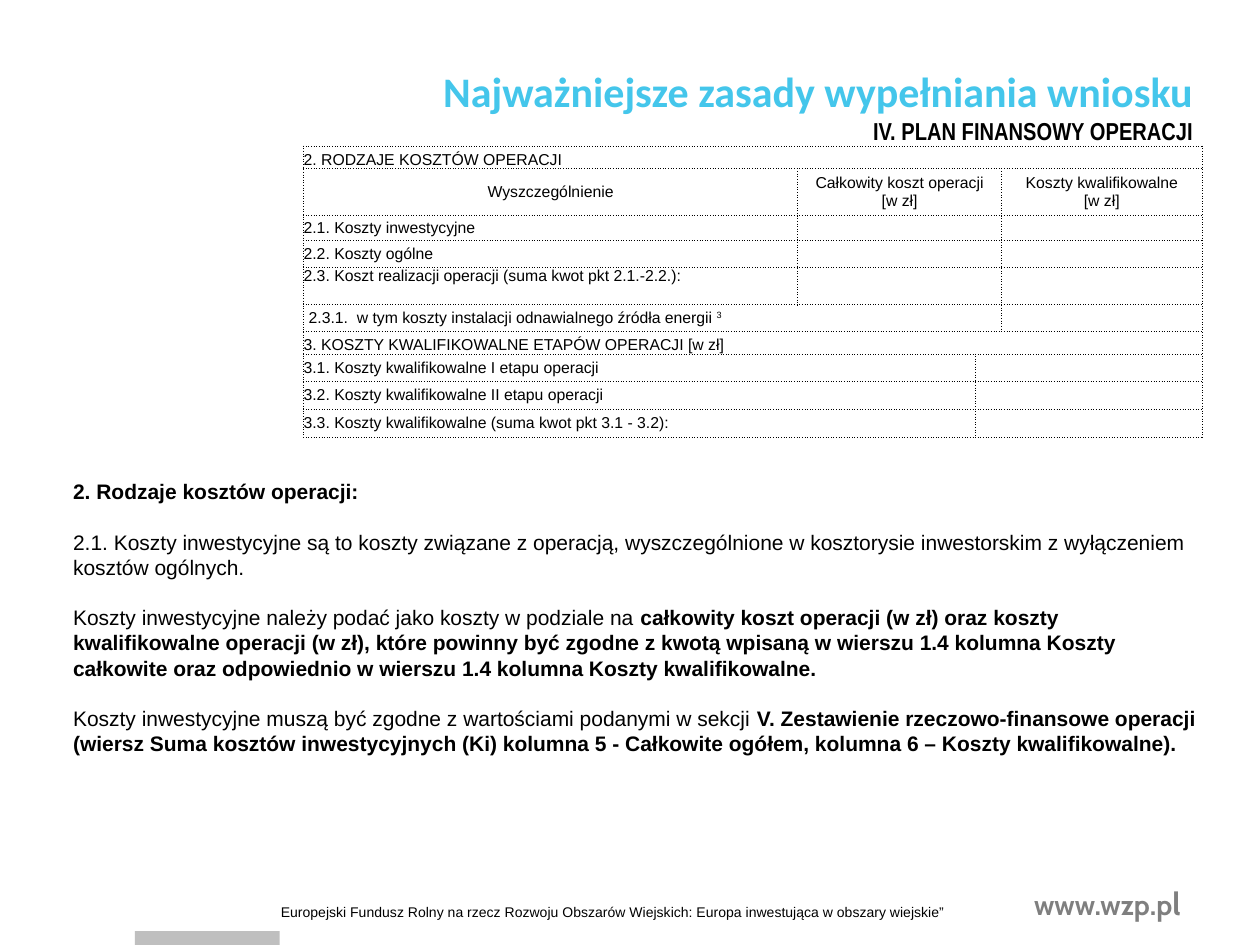
from lxml import etree
from pptx import Presentation
from pptx import util as u
from pptx.dml import color
from pptx.enum import shapes, text
from pptx.oxml import ns

ROWS = [
    (0.18, ["2. RODZAJE KOSZTÓW OPERACJI"], [(0, 3)]),
    (0.37, ["Wyszczególnienie", "Całkowity koszt operacji\v[w zł]", "",
            "Koszty kwalifikowalne\v[w zł]"], [(1, 2)]),
    (0.2, ["2.1. Koszty inwestycyjne"], [(1, 2)]),
    (0.21, ["2.2. Koszty ogólne"], [(1, 2)]),
    (0.3, ["2.3. Koszt realizacji operacji (suma kwot pkt 2.1.-2.2.):"], [(1, 2)]),
    (0.21, ["2.3.1.  w tym koszty instalacji odnawialnego źródła energii "], [(0, 2)]),
    (0.18, ["3. KOSZTY KWALIFIKOWALNE ETAPÓW OPERACJI [w zł]"], [(0, 3)]),
    (0.22, ["3.1. Koszty kwalifikowalne I etapu operacji"], [(0, 1), (2, 3)]),
    (0.22, ["3.2. Koszty kwalifikowalne II etapu operacji"], [(0, 1), (2, 3)]),
    (0.22, ["3.3. Koszty kwalifikowalne (suma kwot pkt 3.1 - 3.2):"], [(0, 1), (2, 3)]),
]
COLS = [3.92, 1.41, 0.21, 1.59]
HEAD, NOTE, TOP = 1, 5, 4
BANDS = (0, 6)
BODY = [
    [("2. Rodzaje kosztów operacji:", True)],
    [("2.1. Koszty inwestycyjne są to koszty związane z operacją, wyszczególnione "
      "w kosztorysie inwestorskim z wyłączeniem kosztów ogólnych.", False)],
    [("Koszty inwestycyjne należy podać jako koszty w podziale na ", False),
     ("całkowity koszt operacji (w zł) oraz koszty kwalifikowalne operacji (w zł), "
      "które powinny być zgodne z kwotą wpisaną w wierszu 1.4 kolumna Koszty całkowite "
      "oraz odpowiednio w wierszu 1.4 kolumna Koszty kwalifikowalne.", True)],
    [("Koszty inwestycyjne muszą być zgodne z wartościami podanymi w sekcji ", False),
     ("V. Zestawienie rzeczowo-finansowe operacji (wiersz Suma kosztów inwestycyjnych "
      "(Ki) kolumna 5 - Całkowite ogółem, kolumna 6 – Koszty kwalifikowalne).", True)],
]


def paint(item, tint):
    """Give a fill or a font the colour of a hex string."""
    tone = color.RGBColor.from_string(tint)
    if hasattr(item, "solid"):
        item.solid()
        item.fore_color.rgb = tone
    else:
        item.color.rgb = tone


def style(font, name, size, tint, bold=False):
    """Set the face, size, colour and weight of a font."""
    font.name, font.size, font.bold = name, u.Pt(size), bold
    paint(font, tint)


def place(shape, box):
    """Move a shape to a box in inches."""
    shape.left, shape.top, shape.width, shape.height = map(u.Inches, box)


def frame(shape):
    """Return the wrapped, top-anchored text frame of a shape."""
    tf = shape.text_frame
    tf.word_wrap = True
    tf.auto_size = text.MSO_AUTO_SIZE.NONE
    tf.vertical_anchor = text.MSO_ANCHOR.TOP
    return tf


def rule(cell):
    """Draw dotted borders round a table cell."""
    props = cell._tc.get_or_add_tcPr()
    for side in ("a:lnL", "a:lnR", "a:lnT", "a:lnB"):
        line = etree.SubElement(props, ns.qn(side), w=str(u.Pt(0.5)))
        fill = etree.SubElement(line, ns.qn("a:solidFill"))
        etree.SubElement(fill, ns.qn("a:srgbClr"), val="000000")
        etree.SubElement(line, ns.qn("a:prstDash"), val="sysDot")


def title(slide, box):
    """Fill the title placeholder with the heading and its section."""
    place(slide.shapes.title, box)
    tf = frame(slide.shapes.title)
    tf.text = "Najważniejsze zasady wypełniania wniosku\nIV. PLAN FINANSOWY OPERACJI"
    looks = [("Calibri", 24, "44C6EB", True), ("Arial Narrow", 14, "000000", True)]
    for para, look in zip(tf.paragraphs, looks):
        para.alignment = text.PP_ALIGN.RIGHT
        style(para.font, *look)


def body(slide, box):
    """Fill the body placeholder with the rules on costs."""
    shape = slide.placeholders[1]
    place(shape, box)
    tf = frame(shape)
    for i, parts in enumerate(BODY):
        para = tf.add_paragraph() if i else tf.paragraphs[0]
        para.space_before = u.Pt(14.4 if i else 0)
        props = para._p.get_or_add_pPr()
        props.set("marL", "0")
        props.set("indent", "0")
        etree.SubElement(props, ns.qn("a:buNone"))
        style(para.font, "Arial", 12, "000000")
        for words, bold in parts:
            run = para.add_run()
            run.text, run.font.bold = words, bold


def fill(cell, words, row):
    """Write one table cell in the manner of its row."""
    rule(cell)
    paint(cell.fill, "FFFFFF")
    cell.margin_left = cell.margin_right = cell.margin_top = cell.margin_bottom = 0
    anchor = text.MSO_ANCHOR
    cell.vertical_anchor = (anchor.BOTTOM if row in BANDS else
                            anchor.TOP if row == TOP else anchor.MIDDLE)
    para = cell.text_frame.paragraphs[0]
    para.text = words
    if row == HEAD:
        para.alignment = text.PP_ALIGN.CENTER
    style(para.font, "Arial", 9, "000000")
    if not words:
        etree.SubElement(para._p, ns.qn("a:endParaRPr"), sz="900")
    elif row == NOTE:
        cell.margin_left = u.Inches(0.04)
        mark = para.add_run()
        mark.text = "3"
        mark._r.get_or_add_rPr().set("baseline", "30000")


def costs(slide, box):
    """Add the table of cost types and stages."""
    table = slide.shapes.add_table(len(ROWS), len(COLS), *map(u.Inches, box)).table
    table.first_row = table.horz_banding = False
    for col, width in zip(table.columns, COLS):
        col.width = u.Inches(width)
    for r, (height, words, spans) in enumerate(ROWS):
        table.rows[r].height = u.Inches(height)
        for c in range(len(COLS)):
            fill(table.cell(r, c), words[c] if c < len(words) else "", r)
        for first, last in spans:
            table.cell(r, first).merge(table.cell(r, last))


def label(slide, box, words):
    """Add a text box and return its paragraph."""
    para = frame(slide.shapes.add_textbox(*map(u.Inches, box))).paragraphs[0]
    para.text = words
    return para


def footer(slide, box):
    """Add the bar, the fund line and the web address."""
    x, y, wide, high = box
    bar = slide.shapes.add_shape(shapes.MSO_SHAPE.RECTANGLE,
                                 *map(u.Inches, (x, y + high - 0.11, 1.15, 0.11)))
    bar.shadow.inherit = False
    paint(bar.fill, "BFBFBF")
    bar.line.fill.background()
    site = label(slide, (x + wide - 1.49, y, 1.49, 0.4), "www.wzp.p")
    style(site.font, "Cabin", 16, "7F7F7F", True)
    tail = site.add_run()
    tail.text, tail.font.size = "l", u.Pt(18)
    fund = label(slide, (x + 1.06, y + 0.15, 7.08, 0.24),
                 "Europejski Fundusz Rolny na rzecz Rozwoju Obszarów Wiejskich: "
                 "Europa inwestująca w obszary wiejskie”")
    style(fund.font, "Arial", 8, "000000")


def main():
    """Build the slide and save it."""
    deck = Presentation()
    deck.slide_width, deck.slide_height = u.Inches(10), u.Inches(7.5)
    slide = deck.slides.add_slide(deck.slide_layouts[1])
    footer(slide, (1.07, 6.97, 8.53, 0.53))
    body(slide, (0.48, 3.75, 9.14, 3.03))
    title(slide, (3.15, 0.47, 6.42, 0.98))
    costs(slide, (2.41, 1.16, 7.13, 2.31))
    deck.save("out.pptx")


if __name__ == "__main__":
    main()
